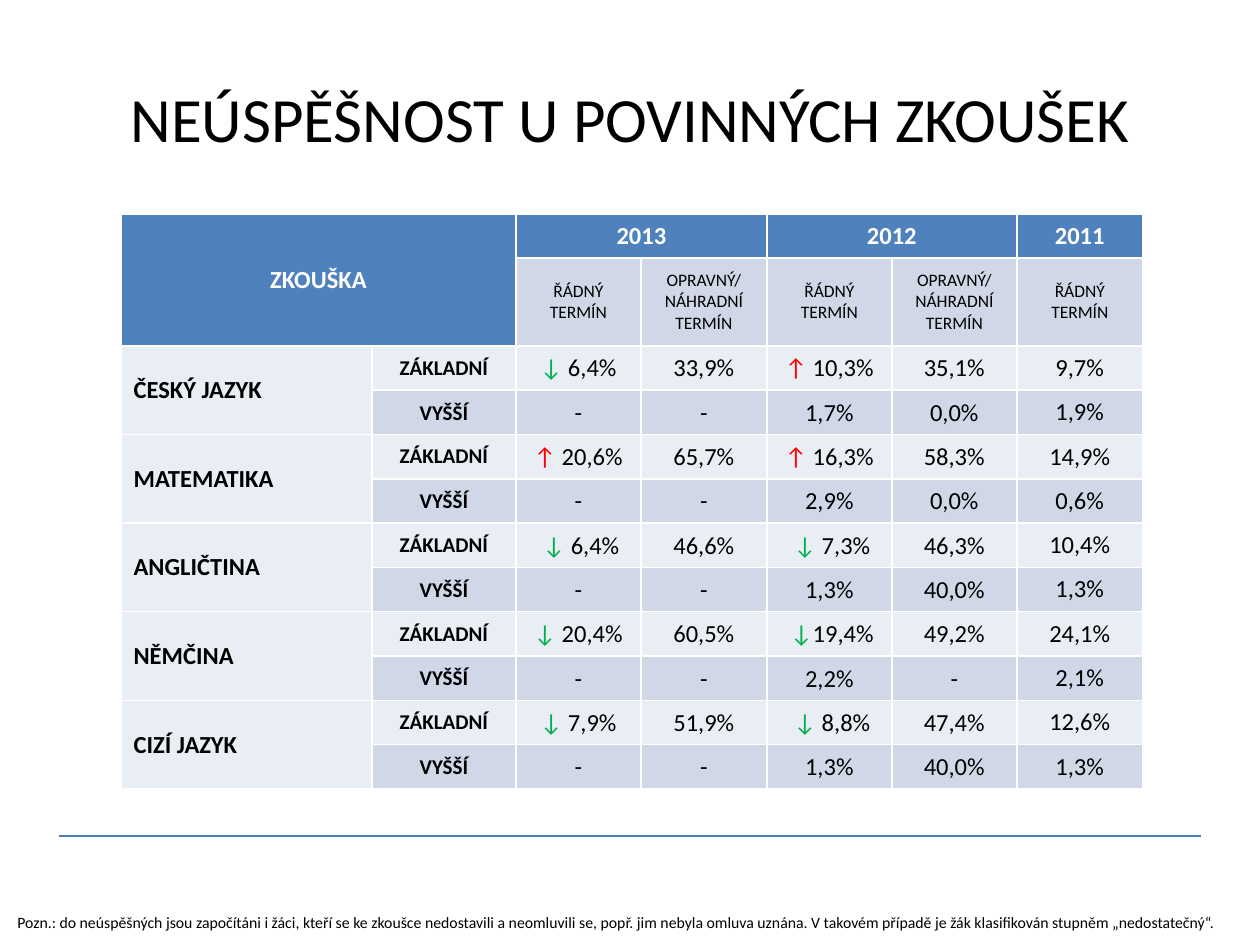
"""Build the slide on failure rates in the compulsory exams."""
from lxml.etree import SubElement
from pptx import Presentation
from pptx.dml.color import RGBColor
from pptx.enum.shapes import MSO_CONNECTOR
from pptx.enum.text import MSO_ANCHOR, PP_ALIGN
from pptx.oxml.ns import qn
from pptx.util import Pt

HUES = {"head": "4F81BD", "band": "D0D8E8", "pale": "E9EDF4", "rule": "4B7EBC",
        "ink": "000000", "white": "FFFFFF", "↓": "00B050", "↑": "FF0000"}
FONT = "Calibri"
TITLE = "NEÚSPĚŠNOST U POVINNÝCH ZKOUŠEK"
NOTE = ("Pozn.: do neúspěšných jsou započítáni i žáci, kteří se ke zkoušce nedostavili "
        "a neomluvili se, popř. jim nebyla omluva uznána. V takovém případě je žák "
        "klasifikován stupněm „nedostatečný“.")
YEARS = ["ZKOUŠKA", "", "2013", "", "2012", "", "2011"]
MAIN, RETRY = "ŘÁDNÝ TERMÍN", "OPRAVNÝ/ NÁHRADNÍ TERMÍN"
TERMS = ["", "", MAIN, RETRY, MAIN, RETRY, MAIN]
LEVELS = ["ZÁKLADNÍ", "VYŠŠÍ"]
EXAMS = [
    ("ČESKÝ JAZYK", ["↓ 6,4%", "33,9%", "↑ 10,3%", "35,1%", "9,7%"],
     ["-", "-", "1,7%", "0,0%", "1,9%"]),
    ("MATEMATIKA", ["↑ 20,6%", "65,7%", "↑ 16,3%", "58,3%", "14,9%"],
     ["-", "-", "2,9%", "0,0%", "0,6%"]),
    ("ANGLIČTINA", [" ↓ 6,4%", "46,6%", " ↓ 7,3%", "46,3%", "10,4%"],
     ["-", "-", "1,3%", "40,0%", "1,3%"]),
    ("NĚMČINA", ["↓ 20,4%", "60,5%", " ↓19,4%", "49,2%", "24,1%"],
     ["-", "-", "2,2%", "-", "2,1%"]),
    ("CIZÍ JAZYK", ["↓ 7,9%", "51,9%", " ↓ 8,8%", "47,4%", "12,6%"],
     ["-", "-", "1,3%", "40,0%", "1,3%"]),
]
COLS = [251, 144, 125, 126, 125, 125, 126]
HEADS = [44, 88]
BODY = 443
SPANS = [(0, 0, 1, 1), (0, 2, 0, 3), (0, 4, 0, 5)]


def px(n):
    return round(n * 914400 / 126)


def hue(name):
    return RGBColor.from_string(HUES[name])


def style(para, size, tint="ink", bold=False, align=PP_ALIGN.CENTER):
    font = para.font
    font.name, font.size, font.bold = FONT, Pt(size), bold
    font.color.rgb = hue(tint)
    para.alignment = align


def label(slide, text, box, size, align, anchor):
    frame = slide.shapes.add_textbox(*map(px, box)).text_frame
    frame.word_wrap = True
    frame.vertical_anchor = anchor
    para = frame.paragraphs[0]
    para.text = text
    style(para, size, align=align)


def border(cell):
    props = cell._tc.get_or_add_tcPr()
    for side in ("lnL", "lnR", "lnT", "lnB"):
        line = SubElement(props, qn("a:" + side), w=str(Pt(1)))
        fill = SubElement(line, qn("a:solidFill"))
        SubElement(fill, qn("a:srgbClr"), val=HUES["white"])


def write(para, text):
    mark = next((m for m in "↓↑" if m in text), None)
    if not mark:
        para.text = text
        return
    lead, rest = text.split(mark)
    tail = rest.lstrip()
    arrow = lead + mark + rest[:len(rest) - len(tail)]
    for part, tint in ((arrow, mark), (tail, "ink")):
        run = para.add_run()
        run.text = part
        run.font.color.rgb = hue(tint)


def look(row, col):
    if row == 0 or (row == 1 and col < 2):
        return "head", 14, "white", True
    if row == 1:
        return "band", 10, "ink", False
    fill = "band" if row % 2 and col else "pale"
    return fill, 12 if col == 1 else 14, "ink", col < 2


def grid(slide):
    rows = [YEARS, TERMS]
    for exam, *rates in EXAMS:
        for i, level in enumerate(LEVELS):
            rows.append(["" if i else exam, level] + rates[i])
    count = len(rows) - len(HEADS)
    highs = HEADS + [BODY / count] * count
    table = slide.shapes.add_table(len(rows), len(COLS), px(121), px(214),
                                   px(sum(COLS)), px(sum(highs))).table
    for col, wide in zip(table.columns, COLS):
        col.width = px(wide)
    for row, high in zip(table.rows, highs):
        row.height = px(high)
    for r, line in enumerate(rows):
        for c, text in enumerate(line):
            cell = table.cell(r, c)
            fill, size, tint, bold = look(r, c)
            border(cell)
            cell.fill.solid()
            cell.fill.fore_color.rgb = hue(fill)
            cell.vertical_anchor = MSO_ANCHOR.MIDDLE
            if r > 1 and (1 < c < 6 or c == 1 and r % 2):
                cell.margin_left = cell.margin_right = cell.margin_top = px(1)
                cell.margin_bottom = 0
            para = cell.text_frame.paragraphs[0]
            write(para, text)
            side = PP_ALIGN.LEFT if r > 1 and c == 0 else PP_ALIGN.CENTER
            style(para, size, tint, bold, side)
    pairs = [(r, 0, r + 1, 0) for r in range(len(HEADS), len(rows), len(LEVELS))]
    for top, left, low, right in SPANS + pairs:
        table.cell(top, left).merge(table.cell(low, right))


def main():
    deck = Presentation()
    deck.slide_width, deck.slide_height = px(1260), px(945)
    slide = deck.slides.add_slide(deck.slide_layouts[6])
    rule = slide.shapes.add_connector(MSO_CONNECTOR.STRAIGHT,
                                      px(59), px(836), px(1201), px(836))
    rule.line.color.rgb = hue("rule")
    rule.line.width = Pt(0.75)
    SubElement(rule._element.spPr, qn("a:effectLst"))
    label(slide, TITLE, (63, 38, 1134, 158), 36, PP_ALIGN.CENTER, MSO_ANCHOR.MIDDLE)
    grid(slide)
    label(slide, NOTE, (5, 907, 1255, 32), 9, PP_ALIGN.LEFT, MSO_ANCHOR.TOP)
    deck.save("out.pptx")


if __name__ == "__main__":
    main()
